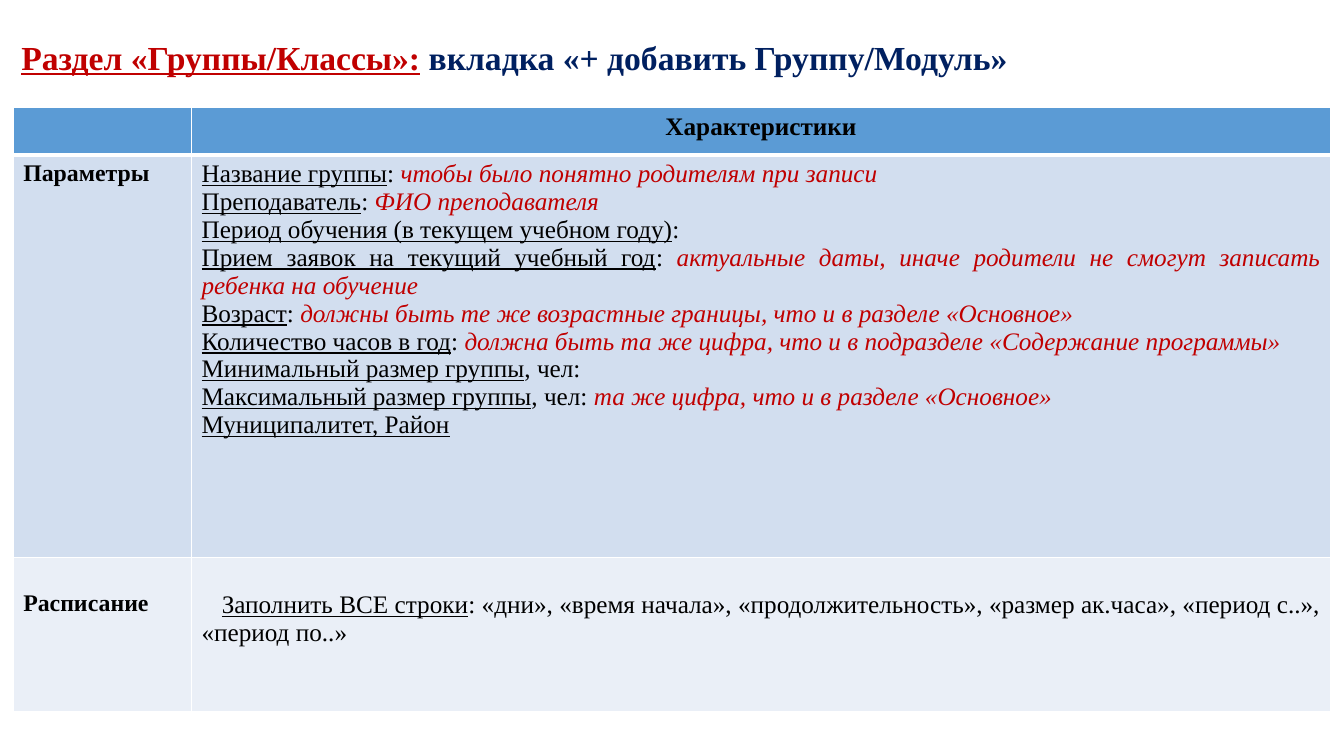
from lxml import etree
from pptx import Presentation
from pptx.dml.color import RGBColor
from pptx.enum.text import MSO_ANCHOR, MSO_AUTO_SIZE, PP_ALIGN
from pptx.oxml.ns import qn
from pptx.util import Pt

LEFT = PP_ALIGN.LEFT
CENTER = PP_ALIGN.CENTER
JUSTIFY = PP_ALIGN.JUSTIFY
MIDDLE = MSO_ANCHOR.MIDDLE
NO_AUTOFIT = MSO_AUTO_SIZE.NONE

RED = RGBColor(0xC0, 0x00, 0x00)
NAVY = RGBColor(0x00, 0x20, 0x60)
BLACK = RGBColor(0x00, 0x00, 0x00)
WHITE = RGBColor(0xFF, 0xFF, 0xFF)
HEADER_BLUE = RGBColor(0x5B, 0x9B, 0xD5)
BAND_BLUE = RGBColor(0xD2, 0xDE, 0xEF)
BAND_PALE = RGBColor(0xEA, 0xEF, 0xF7)

FONT_NAME = "Times New Roman"
TITLE_SECTION = {"size": Pt(24), "bold": True, "underline": True, "color": RED}
TITLE_TAB = {"size": Pt(24), "bold": True, "underline": False, "color": NAVY}
HEADING = {"size": Pt(18), "bold": True, "color": BLACK}
ROW_NAME = {"size": Pt(17), "bold": True, "color": BLACK}
FIELD = {"size": Pt(18), "bold": False, "underline": True, "color": BLACK}
PLAIN = {"size": Pt(18), "bold": False, "underline": False, "color": BLACK}
HINT = {"size": Pt(18), "bold": False, "italic": True, "color": RED}

PARAMETERS = [
    ("Название группы", ": ", "чтобы было понятно родителям при записи"),
    ("Преподаватель", ": ", "ФИО преподавателя"),
    ("Период обучения (в текущем учебном году)", ":", ""),
    ("Прием заявок на текущий учебный год", ": ",
     "актуальные даты, иначе родители не смогут записать ребенка на обучение"),
    ("Возраст", ": ", "должны быть те же возрастные границы, что и в разделе «Основное»"),
    ("Количество часов в год", ": ",
     "должна быть та же цифра, что и в подразделе «Содержание программы»"),
    ("Минимальный размер группы", ", чел:", ""),
    ("Максимальный размер группы", ", чел: ", "та же цифра, что и в разделе «Основное»"),
    ("Муниципалитет, Район", "", ""),
]
SCHEDULE = [
    ("Заполнить ВСЕ строки",
     ": «дни», «время начала», «продолжительность», «размер ак.часа», «период с..», «период по..»",
     ""),
]

COLUMN_WIDTHS = [127.4, 813.6]
ROW_HEIGHTS = [33.8, 287.3, 110.2]
ROW_FILLS = [HEADER_BLUE, BAND_BLUE, BAND_PALE]


def write_paragraphs(text_frame, paragraphs, alignment):
    for index, pieces in enumerate(paragraphs):
        paragraph = text_frame.add_paragraph() if index else text_frame.paragraphs[0]
        paragraph.alignment = alignment
        for text, style in pieces:
            if not text:
                continue
            run = paragraph.add_run()
            run.text = text
            run.font.name = FONT_NAME
            for name, value in style.items():
                if name == "color":
                    run.font.color.rgb = value
                else:
                    setattr(run.font, name, value)


def field_paragraphs(entries):
    return [list(zip(entry, (FIELD, PLAIN, HINT))) for entry in entries]


def add_title(slide, left, top, width, height):
    title = slide.shapes.title
    box = {"left": left, "top": top, "width": width, "height": height}
    for name, value in box.items():
        setattr(title, name, Pt(value))
    text_frame = title.text_frame
    frame_format = {
        "word_wrap": True, "auto_size": NO_AUTOFIT, "vertical_anchor": MIDDLE,
        "margin_left": Pt(5.3), "margin_right": Pt(5.3),
        "margin_top": Pt(2.6), "margin_bottom": Pt(2.6),
    }
    for name, value in frame_format.items():
        setattr(text_frame, name, value)
    write_paragraphs(text_frame, [[
        ("Раздел «Группы/Классы»:", TITLE_SECTION),
        (" вкладка «+ добавить Группу/Модуль»", TITLE_TAB),
    ]], LEFT)


def set_borders(cell, widths):
    properties = cell._tc.get_or_add_tcPr()
    for tag, width in widths.items():
        line = etree.SubElement(properties, qn(tag), w=str(Pt(width)))
        fill = etree.SubElement(line, qn("a:solidFill"))
        etree.SubElement(fill, qn("a:srgbClr"), val=str(WHITE))


def add_characteristics_table(slide, left, top, width, height):
    frame = slide.shapes.add_table(
        len(ROW_HEIGHTS), len(COLUMN_WIDTHS), Pt(left), Pt(top), Pt(width), Pt(height))
    table = frame.table
    for column, column_width in zip(table.columns, COLUMN_WIDTHS):
        column.width = Pt(column_width)
    for row_index, (row, row_height) in enumerate(zip(table.rows, ROW_HEIGHTS)):
        row.height = Pt(row_height)
        for cell in row.cells:
            set_borders(cell, {
                "a:lnL": 1, "a:lnR": 1,
                "a:lnT": 3 if row_index == 1 else 1,
                "a:lnB": 3 if row_index == 0 else 1,
            })
            cell.fill.solid()
            cell.fill.fore_color.rgb = ROW_FILLS[row_index]

    contents = {
        (0, 1): ([[("Характеристики", HEADING)]], CENTER),
        (1, 0): ([[("Параметры", ROW_NAME)]], JUSTIFY),
        (1, 1): (field_paragraphs(PARAMETERS), JUSTIFY),
        (2, 0): ([[("Расписание", ROW_NAME)]], JUSTIFY),
        (2, 1): (field_paragraphs(SCHEDULE), JUSTIFY),
    }
    for position, (paragraphs, alignment) in contents.items():
        write_paragraphs(table.cell(*position).text_frame, paragraphs, alignment)

    table.cell(2, 0).margin_top = Pt(23.2)
    schedule_cell = table.cell(2, 1)
    schedule_cell.margin_top = Pt(24.3)
    paragraph_properties = schedule_cell.text_frame.paragraphs[0]._p.get_or_add_pPr()
    paragraph_properties.set("indent", str(Pt(14.4)))


def main():
    presentation = Presentation()
    presentation.slide_width = Pt(960)
    presentation.slide_height = Pt(540)
    slide = presentation.slides.add_slide(presentation.slide_layouts[5])
    add_title(slide, 10, 18, 778, 45)
    add_characteristics_table(slide, 9.4, 77, sum(COLUMN_WIDTHS), sum(ROW_HEIGHTS))
    presentation.save("out.pptx")


if __name__ == "__main__":
    main()
